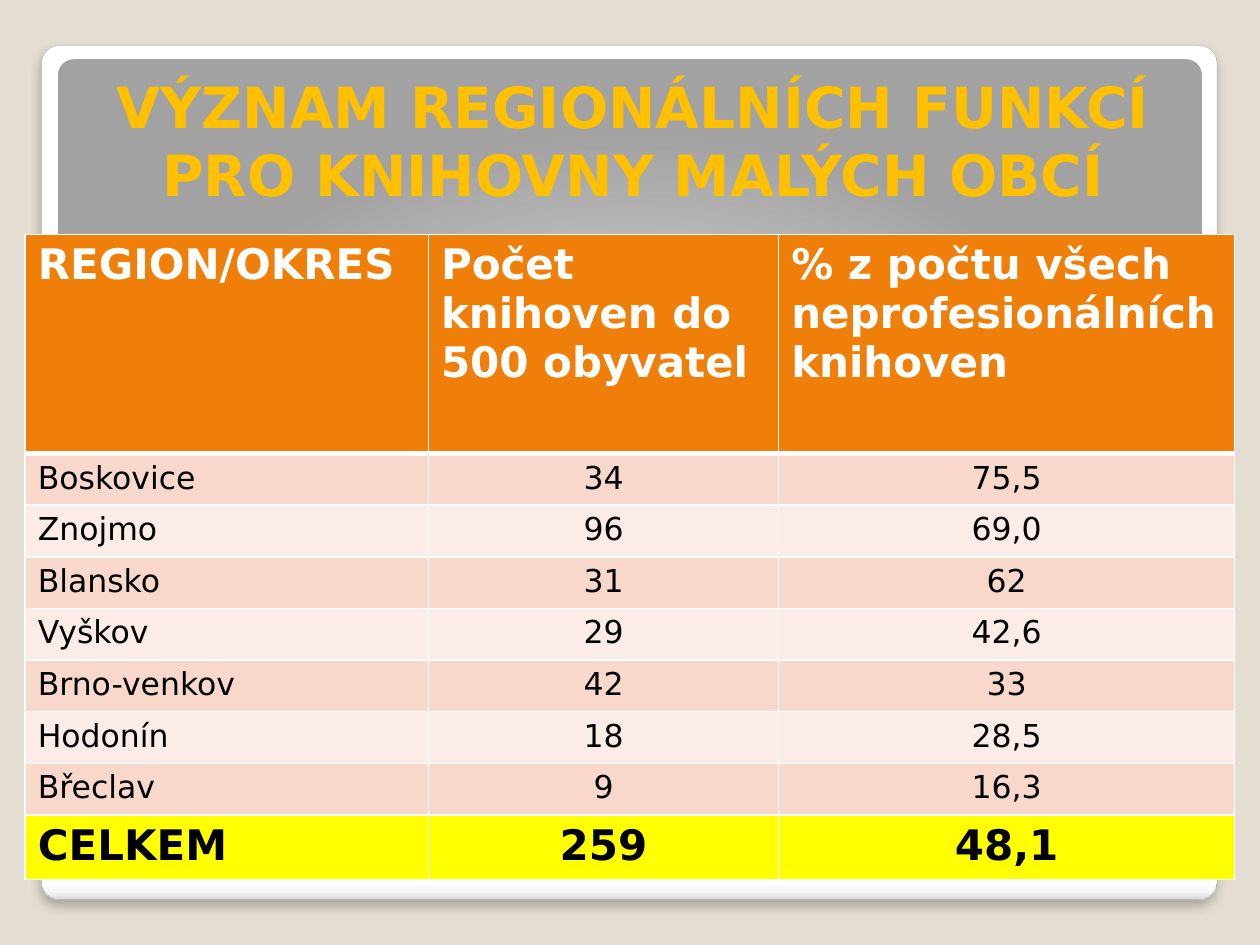
import dataclasses

import lxml.etree
import pptx
import pptx.dml.color
import pptx.enum.shapes
import pptx.enum.text
import pptx.oxml
import pptx.oxml.ns
import pptx.util
from pptx.util import Inches


@dataclasses.dataclass(frozen=True)
class Theme:
    font: str = "DejaVu Sans"
    background: str = "E3DED1"
    title: str = "FFC000"
    header: str = "F07F09"
    bands: tuple = ("F9D8CC", "FCECE7")
    total: str = "FFFF00"
    light: str = "FFFFFF"
    dark: str = "000000"
    edge: str = "A4A4A4"
    title_size: float = 32.4
    strong_size: float = 24
    body_size: float = 18


THEME = Theme()
TITLE = "VÝZNAM REGIONÁLNÍCH FUNKCÍ PRO KNIHOVNY MALÝCH OBCÍ"
ROWS = [
    ("REGION/OKRES", "Počet knihoven do 500 obyvatel",
     "% z počtu všech neprofesionálních knihoven"),
    ("Boskovice", "34", "75,5"),
    ("Znojmo", "96", "69,0"),
    ("Blansko", "31", "62"),
    ("Vyškov", "29", "42,6"),
    ("Brno-venkov", "42", "33"),
    ("Hodonín", "18", "28,5"),
    ("Břeclav", "9", "16,3"),
    ("CELKEM", "259", "48,1"),
]
COLUMN_WIDTHS = (3.2, 2.78, 3.62)
ROW_HEIGHTS = (1.74,) + (0.41,) * 7 + (0.51,)
LINEAR = '<a:lin ang="5400000" scaled="0"/>'
RADIAL = ('<a:path path="circle"><a:fillToRect l="50000" t="175000" '
          'r="50000" b="-75000"/></a:path>')


def color(value):
    return pptx.dml.color.RGBColor.from_string(value)


def element(markup):
    namespace = pptx.oxml.ns.nsdecls("a")
    return pptx.oxml.parse_xml(markup.replace(">", f" {namespace}>", 1))


def format_text(frame, size, shade, bold, alignment):
    for para in frame.paragraphs:
        para.alignment = alignment
        for span in para.runs:
            span.font.name = THEME.font
            span.font.size = pptx.util.Pt(size)
            span.font.bold = bold
            span.font.color.rgb = color(shade)


def add_panel(page, left, top, width, height, stops, direction):
    panel = page.shapes.add_shape(
        pptx.enum.shapes.MSO_SHAPE.ROUNDED_RECTANGLE,
        Inches(left), Inches(top), Inches(width), Inches(height))
    panel.adjustments[0] = 0.021
    panel.shadow.inherit = False
    panel.fill.background()
    panel.line.fill.background()
    marks = "".join(
        f'<a:gs pos="{position * 1000}"><a:srgbClr val="{shade}"/></a:gs>'
        for position, shade in stops)
    properties = panel._element.spPr
    properties.replace(
        properties.find(pptx.oxml.ns.qn("a:noFill")),
        element(f'<a:gradFill rotWithShape="1"><a:gsLst>{marks}</a:gsLst>{direction}</a:gradFill>'))
    return panel


def add_edge_and_shadow(panel):
    panel.line.color.rgb = color(THEME.edge)
    panel.line.width = pptx.util.Pt(0.16)
    effects = panel._element.spPr.find(pptx.oxml.ns.qn("a:effectLst"))
    effects.append(element(
        f'<a:outerShdw blurRad="{pptx.util.Pt(6)}" dist="{pptx.util.Pt(4)}" '
        'dir="5400000" algn="t" rotWithShape="0">'
        f'<a:srgbClr val="{THEME.dark}"><a:alpha val="25000"/></a:srgbClr>'
        '</a:outerShdw>'))


def add_title(page):
    box = page.shapes.add_textbox(
        Inches(0.55), Inches(0.36), Inches(8.95), Inches(1.34))
    frame = box.text_frame
    frame.word_wrap = True
    frame.vertical_anchor = pptx.enum.text.MSO_ANCHOR.BOTTOM
    frame.text = TITLE
    format_text(frame, THEME.title_size, THEME.title, True,
                pptx.enum.text.PP_ALIGN.CENTER)


def set_borders(cell, row):
    widths = {"L": 1, "R": 1, "T": 3 if row == 1 else 1, "B": 3 if row == 0 else 1}
    properties = cell._tc.get_or_add_tcPr()
    for side, width in widths.items():
        properties.append(element(
            f'<a:ln{side} w="{pptx.util.Pt(width)}"><a:solidFill>'
            f'<a:srgbClr val="{THEME.light}"/></a:solidFill></a:ln{side}>'))


def row_style(row):
    if row == 0:
        return THEME.header, THEME.light, THEME.strong_size, True
    if row == len(ROWS) - 1:
        return THEME.total, THEME.dark, THEME.strong_size, True
    return THEME.bands[(row - 1) % 2], THEME.dark, THEME.body_size, False


def add_region_table(page):
    table = page.shapes.add_table(
        len(ROWS), len(COLUMN_WIDTHS), Inches(0.2), Inches(1.86),
        Inches(sum(COLUMN_WIDTHS)), Inches(sum(ROW_HEIGHTS))).table
    table.horz_banding = False
    for column, width in zip(table.columns, COLUMN_WIDTHS):
        column.width = Inches(width)
    for row, (values, height) in enumerate(zip(ROWS, ROW_HEIGHTS)):
        table.rows[row].height = Inches(height)
        fill, shade, size, bold = row_style(row)
        for column, value in enumerate(values):
            cell = table.cell(row, column)
            set_borders(cell, row)
            cell.fill.solid()
            cell.fill.fore_color.rgb = color(fill)
            cell.text_frame.text = value
            centred = row > 0 and column > 0
            alignment = pptx.enum.text.PP_ALIGN.CENTER if centred else pptx.enum.text.PP_ALIGN.LEFT
            format_text(cell.text_frame, size, shade, bold, alignment)


def main():
    deck = pptx.Presentation()
    deck.slide_width, deck.slide_height = Inches(10), Inches(7.5)
    page = deck.slides.add_slide(deck.slide_layouts[6])
    page.background.fill.solid()
    page.background.fill.fore_color.rgb = color(THEME.background)
    frame = add_panel(
        page, 0.33, 0.36, 9.33, 6.78,
        ((0, THEME.light), (98, THEME.light), (99, "F7F7F7"), (100, "DADADA")), LINEAR)
    add_edge_and_shadow(frame)
    add_panel(page, 0.46, 0.47, 9.08, 6,
              ((0, THEME.light), (55, "E1E1E1"), (100, "A2A2A2")), RADIAL)
    add_title(page)
    add_region_table(page)
    deck.save("out.pptx")


if __name__ == "__main__":
    main()
